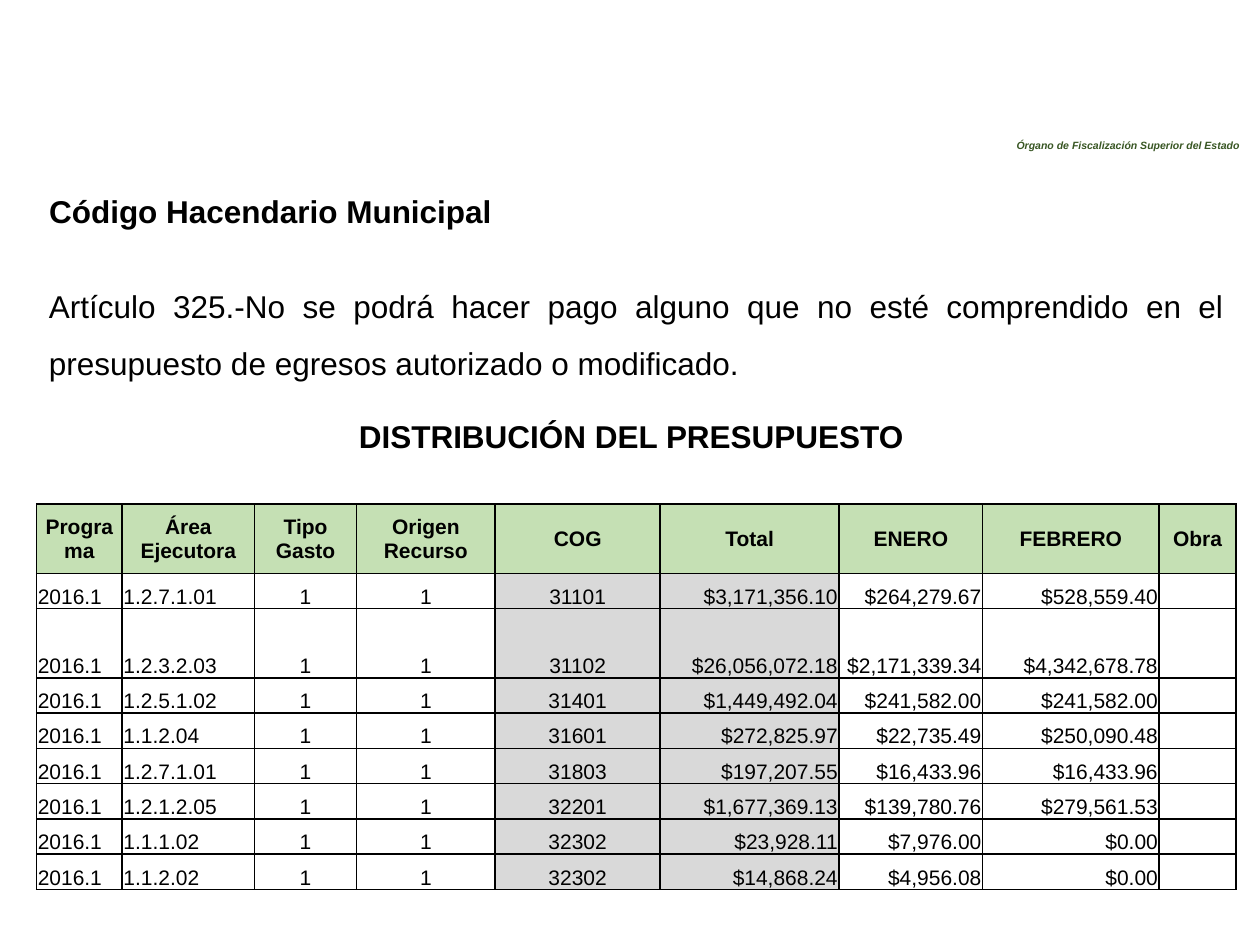
import pptx
import pptx.util
from lxml import etree
from pptx.dml.color import RGBColor
from pptx.enum.shapes import MSO_SHAPE
from pptx.enum.text import MSO_ANCHOR, PP_ALIGN
from pptx.oxml.ns import qn
from pptx.util import Inches

BLACK = RGBColor(0x00, 0x00, 0x00)
WHITE = RGBColor(0xFF, 0xFF, 0xFF)
DARK_GREEN = RGBColor(0x38, 0x56, 0x23)
LIGHT_GREEN = RGBColor(0xC5, 0xE0, 0xB4)
GREY = RGBColor(0xD9, 0xD9, 0xD9)

LEFT, CENTER, RIGHT = PP_ALIGN.LEFT, PP_ALIGN.CENTER, PP_ALIGN.RIGHT
# Heading, width, alignment and fill of the body cells
COLUMNS = [
    ("Programa", 0.68, LEFT, None),
    ("Área\nEjecutora", 1.05, LEFT, None),
    ("Tipo\nGasto", 0.81, CENTER, None),
    ("Origen\nRecurso", 1.1, CENTER, None),
    ("COG", 1.31, CENTER, GREY),
    ("Total", 1.42, RIGHT, GREY),
    ("ENERO", 1.14, RIGHT, None),
    ("FEBRERO", 1.4, RIGHT, None),
    ("Obra", 0.61, LEFT, None),
]
PROGRAM, EXPENSE_TYPE, RESOURCE_ORIGIN = "2016.1", "1", "1"
# Executing area, COG, total, January, February
BUDGET_LINES = [
    ("1.2.7.1.01", "31101", "$3,171,356.10", "$264,279.67", "$528,559.40"),
    ("1.2.3.2.03", "31102", "$26,056,072.18", "$2,171,339.34", "$4,342,678.78"),
    ("1.2.5.1.02", "31401", "$1,449,492.04", "$241,582.00", "$241,582.00"),
    ("1.1.2.04", "31601", "$272,825.97", "$22,735.49", "$250,090.48"),
    ("1.2.7.1.01", "31803", "$197,207.55", "$16,433.96", "$16,433.96"),
    ("1.2.1.2.05", "32201", "$1,677,369.13", "$139,780.76", "$279,561.53"),
    ("1.1.1.02", "32302", "$23,928.11", "$7,976.00", "$0.00"),
    ("1.1.2.02", "32302", "$14,868.24", "$4,956.08", "$0.00"),
]
ROW_HEIGHT = 0.28
TALL_ROW_HEIGHT = 0.55
TALL_ROWS = (0, 2)


def write(frame, text, size, align=LEFT, color=BLACK, **font_format):
    frame.text = text
    font_values = {"name": "Arial", "size": pptx.util.Pt(size), **font_format}
    for paragraph in frame.paragraphs:
        paragraph.alignment = align
        for run in paragraph.runs:
            run.font.color.rgb = color
            for attribute, value in font_values.items():
                setattr(run.font, attribute, value)


def add_agency_label(slide, left, top, width, height):
    label = slide.shapes.add_shape(MSO_SHAPE.RECTANGLE, left, top, width, height)
    label.shadow.inherit = False
    label.fill.solid()
    label.fill.fore_color.rgb = WHITE
    label.line.fill.background()
    label.text_frame.vertical_anchor = MSO_ANCHOR.MIDDLE
    write(label.text_frame, "Órgano de Fiscalización Superior del Estado", 6,
          color=DARK_GREEN, bold=True, italic=True)


def place_title(slide, left, top, width, height):
    title = slide.shapes.title
    box = {"left": left, "top": top, "width": width, "height": height}
    for attribute, value in box.items():
        setattr(title, attribute, value)
    title.text_frame.vertical_anchor = MSO_ANCHOR.TOP
    write(title.text_frame, "Código Hacendario Municipal", 18, bold=True)


def add_text(slide, left, top, width, height, text, line_spacing=1.0, **text_format):
    frame = slide.shapes.add_textbox(left, top, width, height).text_frame
    frame.word_wrap = True
    write(frame, text, 18, **text_format)
    frame.paragraphs[0].line_spacing = line_spacing


def set_borders(cell):
    properties = cell._tc.get_or_add_tcPr()
    for position, side in enumerate(("a:lnL", "a:lnR", "a:lnT", "a:lnB")):
        border = etree.Element(qn(side), w=str(pptx.util.Pt(1)))
        fill = etree.SubElement(border, qn("a:solidFill"))
        etree.SubElement(fill, qn("a:srgbClr"), val=str(BLACK))
        properties.insert(position, border)


def format_cell(cell, text, align, anchor, fill, bold):
    cell_values = {
        "margin_left": Inches(0.01), "margin_top": Inches(0.01),
        "margin_right": Inches(0.01), "margin_bottom": 0,
        "vertical_anchor": anchor,
    }
    for attribute, value in cell_values.items():
        setattr(cell, attribute, value)
    if fill is None:
        cell.fill.background()
    else:
        cell.fill.solid()
        cell.fill.fore_color.rgb = fill
    write(cell.text_frame, text, 12, align, bold=bold)
    if not text:
        # Keeps an empty cell from stretching its row at the default size
        etree.SubElement(cell.text_frame.paragraphs[0]._p, qn("a:endParaRPr"), sz="1200")
    set_borders(cell)


def add_budget_table(slide, left, top, width, height):
    table = slide.shapes.add_table(
        len(BUDGET_LINES) + 1, len(COLUMNS), left, top, width, height).table
    table.horz_banding = False
    for index, row in enumerate(table.rows):
        row.height = Inches(TALL_ROW_HEIGHT if index in TALL_ROWS else ROW_HEIGHT)
    for column, (heading, column_width, align, fill) in enumerate(COLUMNS):
        table.columns[column].width = Inches(column_width)
        format_cell(table.cell(0, column), heading, CENTER, MSO_ANCHOR.MIDDLE,
                    LIGHT_GREEN, True)
        for row, (area, *amounts) in enumerate(BUDGET_LINES, start=1):
            values = [PROGRAM, area, EXPENSE_TYPE, RESOURCE_ORIGIN, *amounts, ""]
            format_cell(table.cell(row, column), values[column], align,
                        MSO_ANCHOR.BOTTOM, fill, False)


def main():
    presentation = pptx.Presentation()
    presentation.slide_width = Inches(10)
    presentation.slide_height = Inches(7.5)
    slide = presentation.slides.add_slide(presentation.slide_layouts[5])

    add_agency_label(slide, Inches(7.97), Inches(1.05), Inches(2.03), Inches(0.2))
    place_title(slide, Inches(0.29), Inches(1.47), Inches(4.17), Inches(0.4))
    add_text(slide, Inches(0.29), Inches(2.08), Inches(9.52), Inches(1.01),
             "Artículo 325.-No se podrá hacer pago alguno que no esté comprendido "
             "en el presupuesto de egresos autorizado o modificado.",
             line_spacing=1.5, align=PP_ALIGN.JUSTIFY)
    add_text(slide, Inches(2.75), Inches(3.26), Inches(5.16), Inches(0.4),
             "DISTRIBUCIÓN DEL PRESUPUESTO", bold=True)
    add_budget_table(slide, Inches(0.29), Inches(4), Inches(9.52), Inches(3.07))
    presentation.save("out.pptx")


if __name__ == "__main__":
    main()
